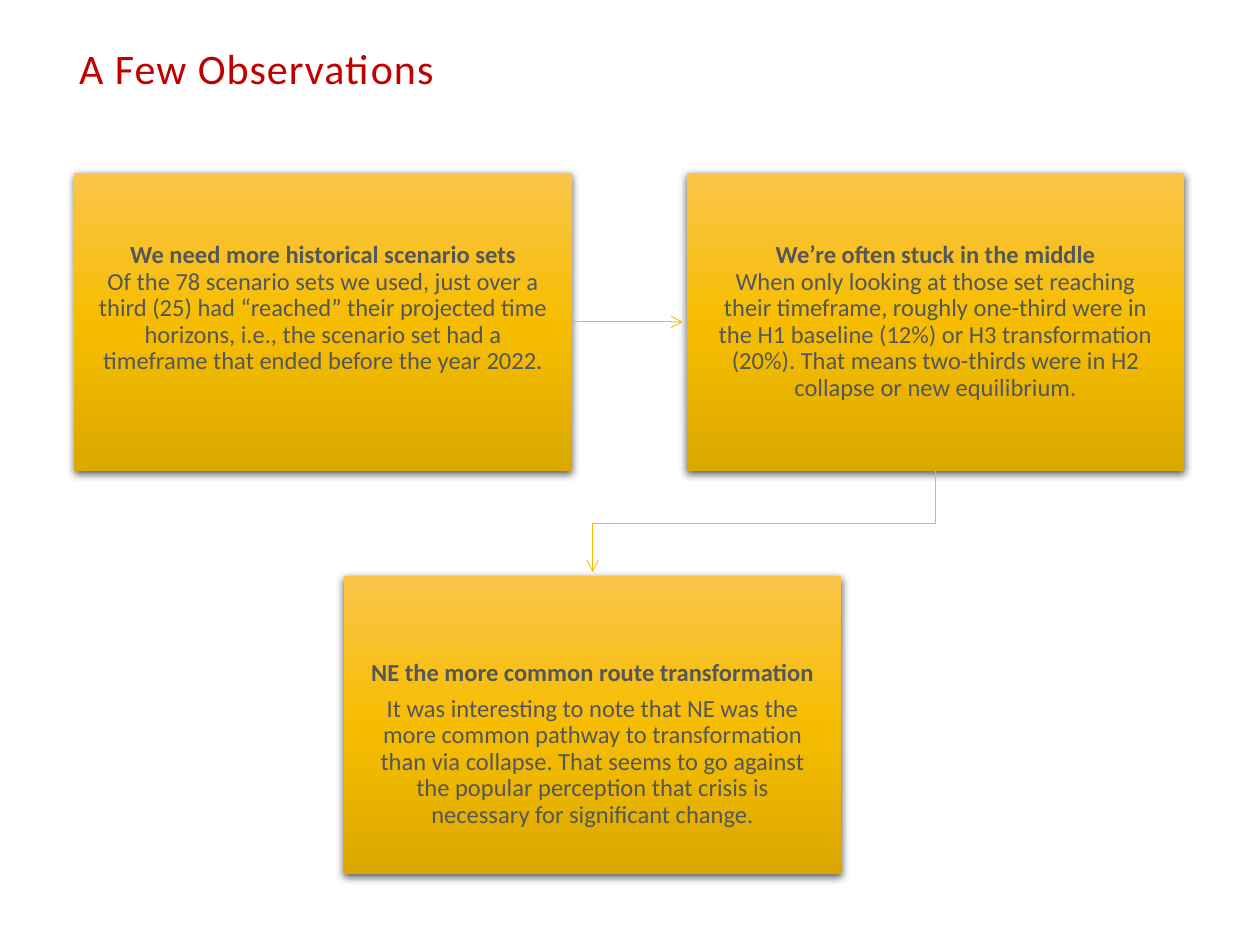
from copy import deepcopy
from pptx import Presentation, util as u
from pptx.dml.color import RGBColor
from pptx.enum import shapes, text
from pptx.oxml import parse_xml
from pptx.oxml.ns import nsdecls, qn

RED = RGBColor(0xC0, 0x00, 0x00)
GREY = RGBColor(0x53, 0x57, 0x5A)
GOLD = RGBColor(0xF6, 0xBD, 0x00)
GRADIENT = [(0, RGBColor(0xFB, 0xC5, 0x4B)), (0.5, GOLD), (1, RGBColor(0xDB, 0xA8, 0x00))]

TITLE = "A Few Observations"
OBSERVATIONS = [
    dict(heading="We need more historical scenario sets",
         body="Of the 78 scenario sets we used, just over a third (25) had “reached” their "
              "projected time horizons, i.e., the scenario set had a timeframe that ended "
              "before the year 2022.",
         column=0, row=0, above=0, below=0.21, gap=0),
    dict(heading="We’re often stuck in the middle",
         body="When only looking at those set reaching their timeframe, roughly one-third were "
              "in the H1 baseline (12%) or H3 transformation (20%). That means two-thirds were "
              "in H2 collapse or new equilibrium.",
         column=1, row=0, above=0, below=0, gap=0),
    dict(heading="NE the more common route transformation",
         body="It was interesting to note that NE was the more common pathway to transformation "
              "than via collapse. That seems to go against the popular perception that crisis is "
              "necessary for significant change.",
         column=0.44, row=1, above=0.31, below=0, gap=5),
]
LEFT, TOP = 0.59, 1.37
CARD_W, CARD_H = 3.95, 2.37
COLUMN_STEP, ROW_STEP = 4.86, 3.2
PAD_X, PAD_Y, TIP_GAP = 0.19, 0.2, 0.03


def apply(target, values):
    for name, value in values.items():
        setattr(target, name, value)


def write(paragraph, words, size, color, bold=False):
    run = paragraph.add_run()
    run.text = words
    apply(run.font, dict(name="Calibri", size=u.Pt(size), bold=bold))
    run.font.color.rgb = color
    return run


def add_title(slide):
    title = slide.shapes.add_textbox(*map(u.Inches, (0.53, 0, 8.95, 1.08)))
    apply(title.text_frame, dict(word_wrap=True, vertical_anchor=text.MSO_ANCHOR.MIDDLE))
    run = write(title.text_frame.paragraphs[0], TITLE, 24, RED)
    run.font._element.set("spc", "60")


def paint_card(card):
    card.line.fill.background()
    card.fill.gradient()
    card.fill.gradient_angle = 270
    stops = card._element.spPr.find(qn("a:gradFill")).find(qn("a:gsLst"))
    stops.insert(1, deepcopy(stops[0]))
    for stop, (position, color) in zip(card.fill.gradient_stops, GRADIENT):
        stop.position = position
        stop.color.rgb = color
    card._element.spPr.append(parse_xml(
        f'<a:effectLst {nsdecls("a")}><a:outerShdw blurRad="{u.Pt(4.5)}" dist="{u.Pt(1.5)}" '
        'dir="5400000" rotWithShape="0"><a:srgbClr val="000000"><a:alpha val="63000"/>'
        '</a:srgbClr></a:outerShdw></a:effectLst>'))


def add_card(slide, item):
    x, y = LEFT + item["column"] * COLUMN_STEP, TOP + item["row"] * ROW_STEP
    card = slide.shapes.add_shape(
        shapes.MSO_SHAPE.RECTANGLE, *map(u.Inches, (x, y, CARD_W, CARD_H)))
    paint_card(card)
    frame = card.text_frame
    apply(frame, dict(word_wrap=True, vertical_anchor=text.MSO_ANCHOR.MIDDLE,
                      margin_left=u.Inches(PAD_X), margin_right=u.Inches(PAD_X),
                      margin_top=u.Inches(PAD_Y + item["above"]),
                      margin_bottom=u.Inches(PAD_Y + item["below"])))
    heading, body = frame.paragraphs[0], frame.add_paragraph()
    for paragraph in (heading, body):
        apply(paragraph, dict(alignment=text.PP_ALIGN.CENTER, line_spacing=0.9))
    heading.space_after = u.Pt(item["gap"])
    write(heading, item["heading"], 14, GREY, bold=True)
    write(body, item["body"], 14, GREY)
    return x, y


def finish_arrow(arrow):
    arrow.line.color.rgb = GOLD
    arrow.line.width = u.Pt(0.5)
    arrow.line._get_or_add_ln().append(parse_xml(f'<a:tailEnd {nsdecls("a")} type="arrow"/>'))
    arrow._element.spPr.append(parse_xml(f'<a:effectLst {nsdecls("a")}/>'))


def add_arrows(slide, first, second, third):
    middle = first[1] + CARD_H / 2
    finish_arrow(slide.shapes.add_connector(
        shapes.MSO_CONNECTOR.STRAIGHT,
        *map(u.Inches, (first[0] + CARD_W, middle, second[0] - TIP_GAP, middle))))

    start_x, end_x = second[0] + CARD_W / 2, third[0] + CARD_W / 2
    start_y, end_y = second[1] + CARD_H, third[1] - TIP_GAP
    turn_y = (second[1] + CARD_H + third[1]) / 2
    route = slide.shapes.build_freeform(u.Inches(start_x), u.Inches(start_y))
    route.add_line_segments(
        [(u.Inches(x), u.Inches(y))
         for x, y in ((start_x, turn_y), (end_x, turn_y), (end_x, end_y))], close=False)
    elbow = route.convert_to_shape()
    elbow.fill.background()
    finish_arrow(elbow)


def main():
    deck = Presentation()
    apply(deck, dict(slide_width=u.Inches(10), slide_height=u.Inches(7.5)))
    slide = deck.slides.add_slide(deck.slide_layouts[6])
    add_title(slide)
    add_arrows(slide, *[add_card(slide, item) for item in OBSERVATIONS])
    deck.save("out.pptx")


if __name__ == "__main__":
    main()
